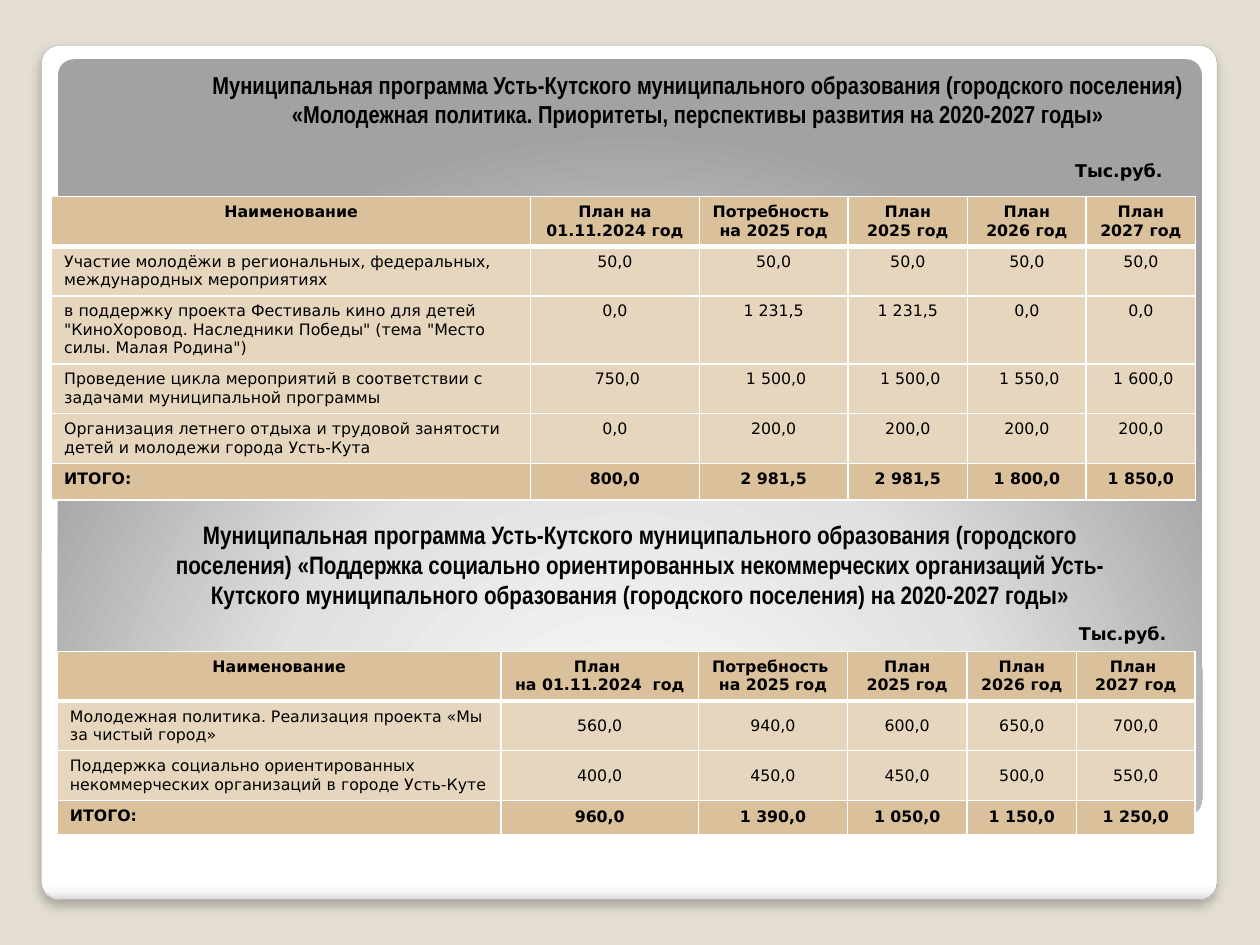
from dataclasses import dataclass

from lxml import etree
from pptx import Presentation
from pptx.dml.color import RGBColor
from pptx.enum.shapes import MSO_SHAPE
from pptx.enum.text import MSO_ANCHOR, MSO_AUTO_SIZE, PP_ALIGN
from pptx.oxml import parse_xml
from pptx.oxml.ns import nsdecls, qn
from pptx.util import Emu, Inches, Pt

# The slide is a grid of 100 columns by 75 square units
COLUMNS, ROWS = 100, 75
UNIT = Inches(10) // COLUMNS

BACKGROUND = RGBColor(0xE3, 0xDE, 0xD1)
BLACK = RGBColor(0, 0, 0)
WHITE = RGBColor(0xFF, 0xFF, 0xFF)
PANEL_EDGE = RGBColor(0xA4, 0xA4, 0xA4)
HEADER_FILL = RGBColor(0xDA, 0xC1, 0x9B)
BODY_FILL = RGBColor(0xE6, 0xD6, 0xBD)

TITLE_FONT, TABLE_FONT = "Arial Narrow", "DejaVu Sans"
ROUNDED = MSO_SHAPE.ROUNDED_RECTANGLE
CENTER, LEFT = PP_ALIGN.CENTER, PP_ALIGN.LEFT
TOP, MIDDLE, BOTTOM = MSO_ANCHOR.TOP, MSO_ANCHOR.MIDDLE, MSO_ANCHOR.BOTTOM
NO_AUTOFIT = MSO_AUTO_SIZE.NONE


@dataclass(frozen=True)
class Area:
    left: float
    top: float
    width: float
    height: float

    def lengths(self) -> list[Emu]:
        return [units(n) for n in (self.left, self.top, self.width, self.height)]


@dataclass(frozen=True)
class BudgetTable:
    left: float
    top: float
    widths: list[float]
    heights: list[float]
    number_anchor: MSO_ANCHOR
    rows: list[list[str]]


def units(count: float) -> Emu:
    return Emu(round(count * UNIT))


def format_text(frame, font: str, size: float, bold: bool, align=CENTER) -> None:
    for para in frame.paragraphs:
        para.alignment = align
        for span in para.runs:
            span.font.name = font
            span.font.size = Pt(size)
            span.font.bold = bold
            span.font.color.rgb = BLACK


def fill_box(box, text: str, font: str, size: float, anchor) -> None:
    frame = box.text_frame
    frame.text = text
    frame.word_wrap = True
    frame.auto_size = NO_AUTOFIT
    frame.vertical_anchor = anchor
    format_text(frame, font, size, True)


def add_text(slide, area: Area, text: str, font: str, size: float, anchor) -> None:
    fill_box(slide.shapes.add_textbox(*area.lengths()), text, font, size, anchor)


def add_panel(slide, area: Area, stops: list[tuple[int, str]], direction: str):
    panel = slide.shapes.add_shape(ROUNDED, *area.lengths())
    panel.adjustments[0] = 0.021
    panel.shadow.inherit = False
    panel.line.fill.background()
    panel.fill.background()
    stop_xml = "".join(
        f'<a:gs pos="{position * 1000}"><a:srgbClr val="{color}"/></a:gs>'
        for position, color in stops
    )
    gradient = parse_xml(
        f'<a:gradFill {nsdecls("a")} rotWithShape="1">'
        f"<a:gsLst>{stop_xml}</a:gsLst>{direction}</a:gradFill>"
    )
    properties = panel.element.spPr
    properties.replace(properties.find(qn("a:noFill")), gradient)
    return panel


def add_shadow(shape) -> None:
    effects = shape.element.spPr.find(qn("a:effectLst"))
    effects.append(parse_xml(
        f'<a:outerShdw {nsdecls("a")} blurRad="{Pt(6)}" dist="{Pt(4)}" dir="5400000" '
        'algn="t" rotWithShape="0"><a:srgbClr val="000000"><a:alpha val="25000"/>'
        "</a:srgbClr></a:outerShdw>"
    ))


def set_borders(cell, top: float, bottom: float) -> None:
    properties = cell._tc.get_or_add_tcPr()
    sides = {"lnL": 1, "lnR": 1, "lnT": top, "lnB": bottom}
    for index, (side, width) in enumerate(sides.items()):
        line = etree.Element(qn(f"a:{side}"), w=str(Pt(width)))
        fill = etree.SubElement(line, qn("a:solidFill"))
        etree.SubElement(fill, qn("a:srgbClr"), val=str(WHITE))
        properties.insert(index, line)


def add_budget(slide, budget: BudgetTable) -> None:
    area = Area(budget.left, budget.top, sum(budget.widths), sum(budget.heights))
    table = slide.shapes.add_table(
        len(budget.rows), len(budget.widths), *area.lengths()).table
    table.horz_banding = False
    for column, width in zip(table.columns, budget.widths):
        column.width = units(width)
    last = len(budget.rows) - 1
    for r, (texts, height) in enumerate(zip(budget.rows, budget.heights)):
        table.rows[r].height = units(height)
        strong = r in (0, last)
        for c, text in enumerate(texts):
            cell = table.cell(r, c)
            cell.text_frame.text = text
            cell.vertical_anchor = budget.number_anchor if r and c else TOP
            cell.fill.solid()
            cell.fill.fore_color.rgb = HEADER_FILL if strong else BODY_FILL
            format_text(cell.text_frame, TABLE_FONT, 9, strong,
                        LEFT if r and not c else CENTER)
            set_borders(cell, 3 if r == 1 else 1, 3 if r == 0 else 1)


YOUTH = BudgetTable(
    4.1, 15.6, [38, 13.4, 11.8, 9.5, 9.4, 8.7], [3.9, 3.9, 5.4, 3.9, 3.9, 2.9], TOP,
    [
        ["Наименование", "План на 01.11.2024 год", "Потребность \nна 2025 год",
         "План 2025 год", "План 2026 год", "План\n2027 год"],
        ["Участие молодёжи в региональных, федеральных, международных мероприятиях",
         "50,0", "50,0", "50,0", "50,0", "50,0"],
        ['в поддержку проекта Фестиваль кино для детей "КиноХоровод. Наследники '
         'Победы" (тема "Место силы. Малая Родина")',
         "0,0", "1 231,5", "1 231,5", "0,0", "0,0"],
        ["Проведение цикла мероприятий в соответствии с задачами муниципальной программы",
         " 750,0", " 1 500,0", " 1 500,0", " 1 550,0", " 1 600,0"],
        ["Организация летнего отдыха и трудовой занятости детей и молодежи города Усть-Кута",
         "0,0", "200,0", "200,0", "200,0", "200,0"],
        ["ИТОГО:", "800,0", "2 981,5", "2 981,5", "1 800,0", "1 850,0"],
    ],
)
NONPROFITS = BudgetTable(
    4.55, 51.7, [35.2, 15.7, 11.8, 9.5, 8.7, 9.4], [3.9, 3.9, 3.9, 2.7], MIDDLE,
    [
        ["Наименование", "План \nна 01.11.2024  год", "Потребность \nна 2025 год",
         "План 2025 год", "План 2026 год", "План \n2027 год"],
        ["Молодежная политика. Реализация проекта «Мы за чистый город»",
         "560,0", "940,0", "600,0", "650,0", "700,0"],
        ["Поддержка социально ориентированных некоммерческих организаций в городе Усть-Куте",
         "400,0", "450,0", "450,0", "500,0", "550,0"],
        ["ИТОГО:", "960,0", "1 390,0", "1 050,0", "1 150,0", "1 250,0"],
    ],
)
PROGRAM = "Муниципальная программа Усть-Кутского муниципального образования (городского поселения) "
YOUTH_TITLE = PROGRAM + "«Молодежная политика. Приоритеты, перспективы развития на 2020-2027 годы»"
NONPROFIT_TITLE = PROGRAM + (
    "«Поддержка социально ориентированных некоммерческих организаций Усть-Кутского "
    "муниципального образования (городского поселения) на 2020-2027 годы»")


def main() -> None:
    deck = Presentation()
    deck.slide_width, deck.slide_height = units(COLUMNS), units(ROWS)
    page = deck.slides.add_slide(deck.slide_layouts[5])
    page.background.fill.solid()
    page.background.fill.fore_color.rgb = BACKGROUND

    # White card and the grey panel on it
    card = add_panel(page, Area(3.3, 3.6, 93.3, 67.8),
                     [(0, "FFFFFF"), (98, "FFFFFF"), (99, "F7F7F7"), (100, "DADADA")],
                     '<a:lin ang="5400000" scaled="0"/>')
    card.line.color.rgb = PANEL_EDGE
    card.line.width = Pt(0.16)
    add_shadow(card)
    add_panel(page, Area(4.6, 4.7, 90.8, 60),
              [(0, "FFFFFF"), (55, "E1E1E1"), (100, "A2A2A2")],
              '<a:path path="circle"><a:fillToRect l="50000" t="175000" '
              'r="50000" b="-75000"/></a:path>')

    # Youth programme
    add_text(page, Area(83.8, 12.3, 10, 2.5), "Тыс.руб.", TABLE_FONT, 10, MIDDLE)
    add_text(page, Area(15.2, 6, 80.4, 4.7), YOUTH_TITLE, TITLE_FONT, 14, BOTTOM)
    add_budget(page, YOUTH)

    # Non-profit programme, whose heading is the slide title
    title = page.shapes.title
    title.left, title.top, title.width, title.height = Area(10.6, 39.5, 80.4, 9.4).lengths()
    fill_box(title, NONPROFIT_TITLE, TITLE_FONT, 14.4, BOTTOM)
    page.shapes._spTree.append(title.element)
    add_text(page, Area(84.1, 49, 10, 2.5), "Тыс.руб.", TABLE_FONT, 10, MIDDLE)
    add_budget(page, NONPROFITS)

    deck.save("out.pptx")


if __name__ == "__main__":
    main()
